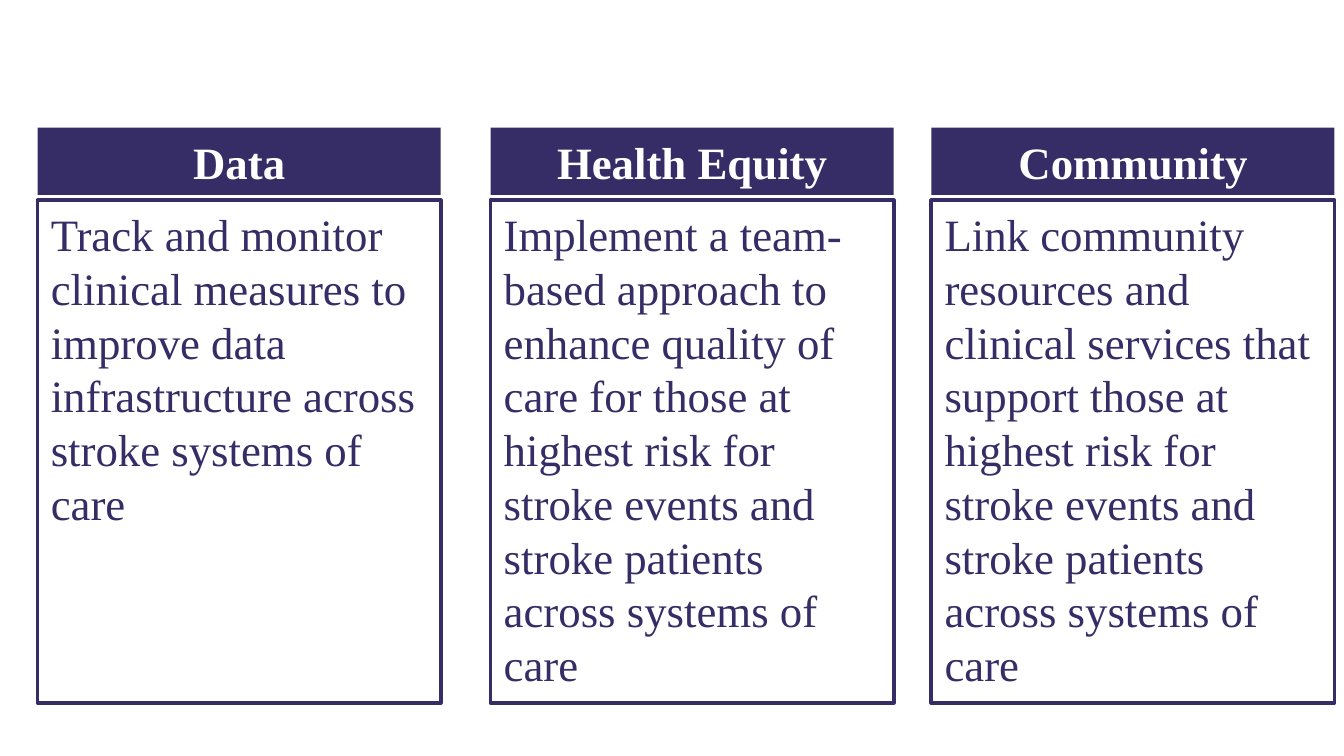
import pptx
import pptx.util
import pptx.dml.color
import pptx.enum.shapes
import pptx.enum.text

INDIGO, WHITE = "362C66", "FFFFFF"


def color(hex_value):
    return pptx.dml.color.RGBColor.from_string(hex_value)


def add_panel(slide, box, text, fill, font_color, bold, alignment):
    shape = slide.shapes.add_shape(pptx.enum.shapes.MSO_SHAPE.RECTANGLE, *box)
    shape.shadow.inherit = False
    if fill:
        shape.fill.solid()
        shape.fill.fore_color.rgb = color(fill)
        shape.line.fill.background()
    else:
        shape.fill.background()
        shape.line.color.rgb = color(INDIGO)
        shape.line.width = pptx.util.Pt(2)
    shape.text_frame.word_wrap = True
    shape.text_frame.vertical_anchor = pptx.enum.text.MSO_ANCHOR.TOP
    paragraph = shape.text_frame.paragraphs[0]
    paragraph.alignment = alignment
    run = paragraph.add_run()
    run.text = text
    font_format = {"name": "Times New Roman", "size": pptx.util.Pt(24), "bold": bold}
    for attribute, value in font_format.items():
        setattr(run.font, attribute, value)
    run.font.color.rgb = color(font_color)


# Slide in 16:9 format
presentation = pptx.Presentation()
presentation.slide_width = width = pptx.util.Inches(10)
presentation.slide_height = width * 9 // 16
slide = presentation.slides.add_slide(presentation.slide_layouts[6])

# Grid: column positions as shares of the width, rows in inches
column_width = int(width * 0.3)
header_top, header_height = pptx.util.Inches(0.95), pptx.util.Inches(0.5)
body_top, body_height = pptx.util.Inches(1.49), pptx.util.Inches(3.74)
risk_group = "those at highest risk for stroke events and stroke patients across systems of care"
columns = [
    (0.028, "Data",
     "Track and monitor clinical measures to improve data infrastructure "
     "across stroke systems of care"),
    (0.365, "Health Equity",
     f"Implement a team-based approach to enhance quality of care for {risk_group}"),
    (0.693, "Community",
     f"Link community resources and clinical services that support {risk_group}"),
]

# Header bar and outlined body in each column
for share, heading, body in columns:
    left = int(width * share)
    add_panel(slide, (left, header_top, column_width, header_height), heading,
              INDIGO, WHITE, True, pptx.enum.text.PP_ALIGN.CENTER)
    add_panel(slide, (left, body_top, column_width, body_height), body,
              None, INDIGO, False, pptx.enum.text.PP_ALIGN.LEFT)

presentation.save("out.pptx")
